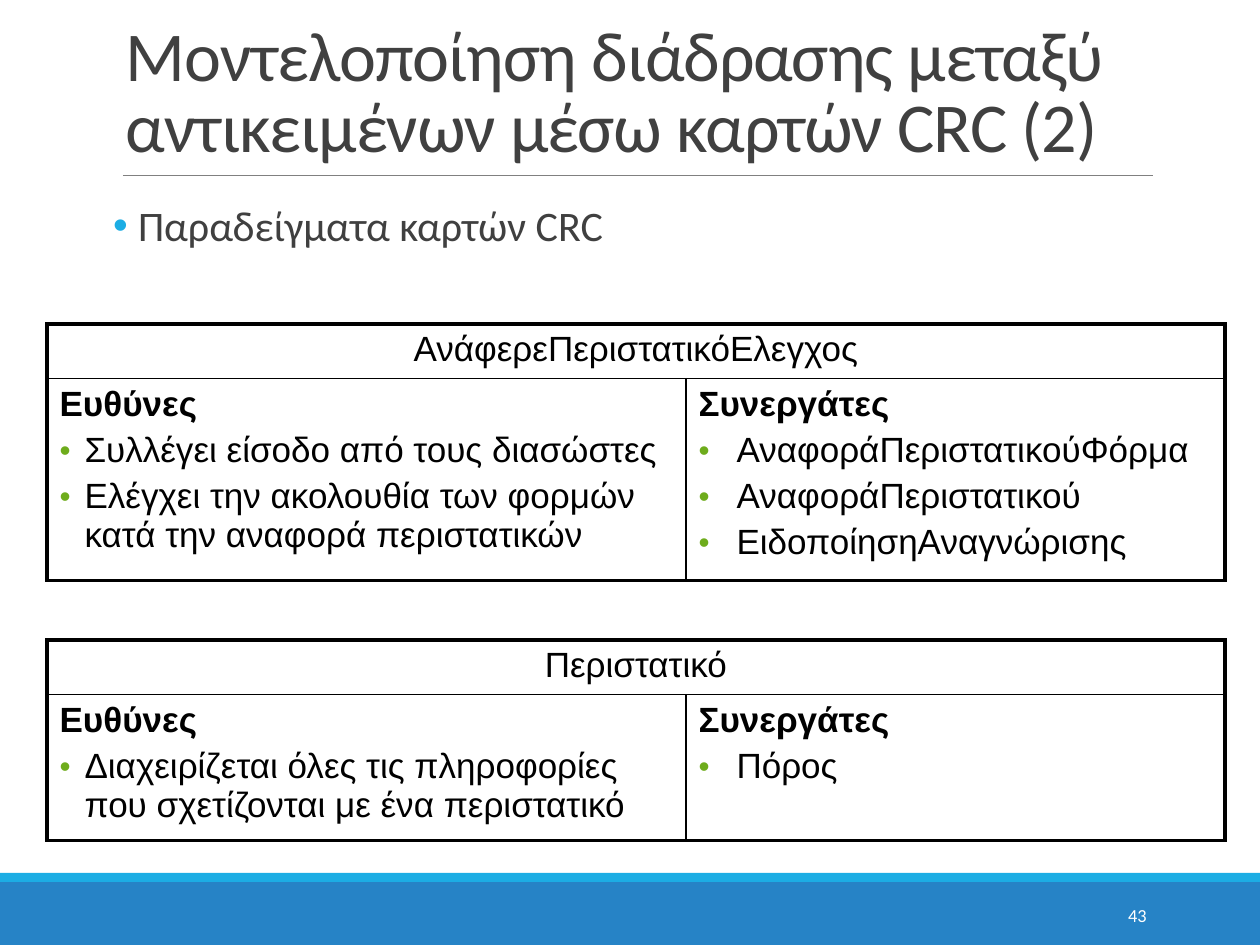
import pptx
import pptx.dml.color
import pptx.enum.shapes
import pptx.enum.text
import pptx.oxml.ns
import pptx.util
from lxml import etree

PX = 914400 // 126
ALIGN = pptx.enum.text.PP_ALIGN
ANCHOR = pptx.enum.text.MSO_ANCHOR

TITLE = "Μοντελοποίηση διάδρασης μεταξύ αντικειμένων μέσω καρτών CRC (2)"
SUBTITLE = "Παραδείγματα καρτών CRC"
PAGE = "43"
BANDS = [((0, 882, 1260, 63), "2683C6"), ((0, 873, 1260, 9), "1CADE4")]

CARD_LEFT, HEAD_H = 47, 52
COL_WIDTHS = (639, 539)
COL_INDENTS = (25, 38)
THICK, THIN = 2.25, 1
CARDS = [
    {"top": 324, "body_h": 190, "name": "ΑνάφερεΠεριστατικόΕλεγχος", "columns": [
        ("Ευθύνες", ["Συλλέγει είσοδο από τους διασώστες",
                     "Ελέγχει την ακολουθία των φορμών κατά την αναφορά περιστατικών"]),
        ("Συνεργάτες", ["ΑναφοράΠεριστατικούΦόρμα", "ΑναφοράΠεριστατικού",
                        "ΕιδοποίησηΑναγνώρισης"])]},
    {"top": 640, "body_h": 137, "name": "Περιστατικό", "columns": [
        ("Ευθύνες", ["Διαχειρίζεται όλες τις πληροφορίες που σχετίζονται με ένα περιστατικό"]),
        ("Συνεργάτες", ["Πόρος"])]},
]


def px(*values):
    return [v * PX for v in values]


def rgb(color):
    return pptx.dml.color.RGBColor.from_string(color)


def sub(parent, tag, **attrs):
    return etree.SubElement(parent, pptx.oxml.ns.qn(tag), attrs)


def add_run(p, text, size, font, color, bold=False):
    r = p.add_run()
    r.text = text
    r.font.size, r.font.name, r.font.bold = pptx.util.Pt(size), font, bold
    r.font.color.rgb = rgb(color)
    return r


def add_bullet(p, indent, color, percent=100):
    """Hang a bullet; call after the paragraph spacing is set."""
    pPr = p._p.get_or_add_pPr()
    pPr.set("marL", str(indent * PX))
    pPr.set("indent", str(-indent * PX))
    sub(sub(pPr, "a:buClr"), "a:srgbClr", val=color)
    sub(pPr, "a:buSzPct", val=str(percent * 1000))
    sub(pPr, "a:buFont", typeface="Arial")
    sub(pPr, "a:buChar", char="•")


def add_text_box(s, box, anchor):
    tf = s.shapes.add_textbox(*px(*box)).text_frame
    tf.word_wrap, tf.vertical_anchor = True, anchor
    return tf


def set_borders(cell, left, right, top, bottom):
    tcPr = cell._tc.get_or_add_tcPr()
    for side, width in zip("LRTB", (left, right, top, bottom)):
        ln = sub(tcPr, "a:ln" + side, w=str(pptx.util.Pt(width)))
        sub(sub(ln, "a:solidFill"), "a:srgbClr", val="000000")
    cell.fill.background()


def fill_column(cell, heading, items, indent):
    tf = cell.text_frame
    p = tf.paragraphs[0]
    p.space_before = pptx.util.Pt(4)
    add_run(p, heading, 20, "Arial", "000000", bold=True)
    for item in items:
        p = tf.add_paragraph()
        p.space_before = pptx.util.Pt(4)
        add_bullet(p, indent, "6EAC1C", 90)
        add_run(p, item, 20, "Arial", "000000")


def add_card(s, card):
    heights = (HEAD_H, card["body_h"])
    table = s.shapes.add_table(2, 2, *px(CARD_LEFT, card["top"], sum(COL_WIDTHS),
                                         sum(heights))).table
    table.first_row = table.horz_banding = False
    for row, height in zip(table.rows, heights):
        row.height = height * PX
    for col, width in enumerate(COL_WIDTHS):
        table.columns[col].width = width * PX
        left, right = (THICK, THIN) if col == 0 else (THIN, THICK)
        set_borders(table.cell(0, col), THICK, THICK, THICK, THIN)
        set_borders(table.cell(1, col), left, right, THIN, THICK)
        fill_column(table.cell(1, col), *card["columns"][col], COL_INDENTS[col])
    head = table.cell(0, 0)
    head.merge(table.cell(0, 1))
    p = head.text_frame.paragraphs[0]
    p.alignment, p.space_before = ALIGN.CENTER, pptx.util.Pt(4)
    add_run(p, card["name"], 20, "Arial", "000000")


def main():
    prs = pptx.Presentation()
    prs.slide_width, prs.slide_height = px(1260, 945)
    s = prs.slides.add_slide(prs.slide_layouts[6])

    for box, color in BANDS:
        sp = s.shapes.add_shape(pptx.enum.shapes.MSO_SHAPE.RECTANGLE, *px(*box))
        sp.shadow.inherit = False
        sp.fill.solid()
        sp.fill.fore_color.rgb = rgb(color)
        sp.line.fill.background()

    rule = s.shapes.add_connector(pptx.enum.shapes.MSO_CONNECTOR.STRAIGHT,
                                  *px(123, 175, 1153, 175))
    rule.line.color.rgb, rule.line.width = rgb("808080"), pptx.util.Pt(0.5)
    sub(rule._element.spPr, "a:effectLst")

    p = add_text_box(s, (113, 14, 1040, 159), ANCHOR.BOTTOM).paragraphs[0]
    p.line_spacing = 0.85
    r = add_run(p, TITLE, 40, "Calibri", "404040")
    r.font._element.set("spc", "-50")

    tf = add_text_box(s, (113, 199, 1040, 664), ANCHOR.TOP)
    tf.margin_left = tf.margin_right = 0
    p = tf.paragraphs[0]
    p.line_spacing = 0.9
    p.space_before, p.space_after = pptx.util.Pt(12), pptx.util.Pt(2)
    add_bullet(p, 25, "1CADE4")
    add_run(p, SUBTITLE, 24, "Calibri", "404040")

    p = add_text_box(s, (1023, 890, 136, 50), ANCHOR.MIDDLE).paragraphs[0]
    p.alignment = ALIGN.RIGHT
    add_run(p, PAGE, 10.5, "Calibri", "FFFFFF")

    for card in CARDS:
        add_card(s, card)
    prs.save("out.pptx")


if __name__ == "__main__":
    main()
